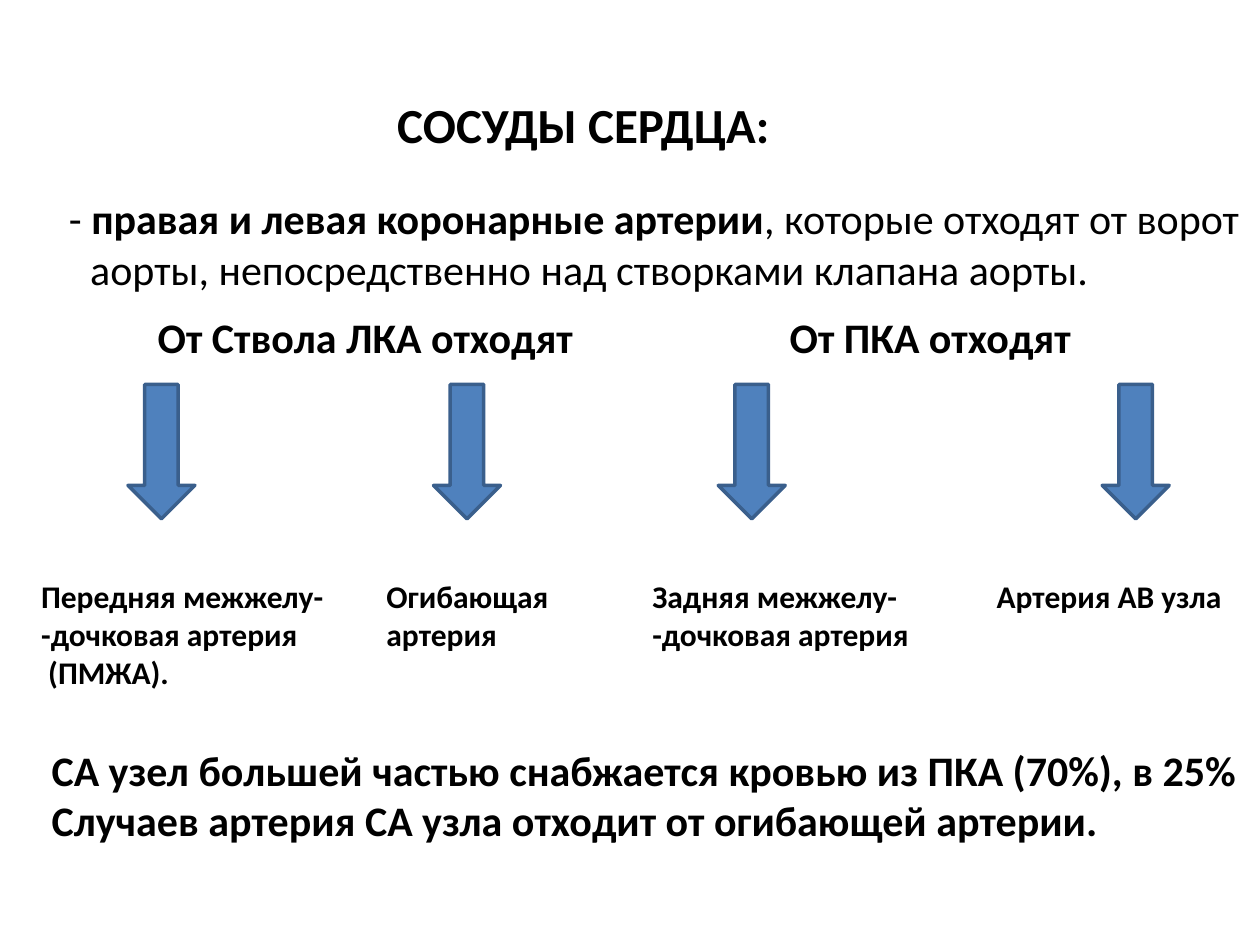
from typing import NamedTuple

from pptx import Presentation
from pptx.dml.color import RGBColor
from pptx.enum.shapes import MSO_SHAPE as Preset
from pptx.enum.text import MSO_ANCHOR as Anchor, PP_ALIGN as Align
from pptx.util import Cm, Pt

BLACK = RGBColor(0x00, 0x00, 0x00)
BLUE = RGBColor(0x4F, 0x81, 0xBD)
DARK_BLUE = RGBColor(0x3A, 0x5F, 0x8C)
FONT = "Calibri"

ARROW_TOP, ARROW_WIDTH, ARROW_HEIGHT = 7.75, 1.35, 2.71
BRANCH_TOP = 11.51
HEADING_TOP = 6.15


class Run(NamedTuple):
    text: str
    bold: bool = True


class Label(NamedTuple):
    """A block of lines; lengths in centimetres, size in points."""
    left: float
    top: float
    width: float
    height: float
    size: int
    lines: list[list[Run]]
    hanging: float = 0


class Branch(NamedTuple):
    """An arrow and the artery it leads to."""
    arrow_left: float
    label_left: float
    label_width: float
    lines: list[str]


def bold_lines(*texts: str) -> list[list[Run]]:
    return [[Run(text)] for text in texts]


def write(shape, label: Label) -> None:
    shape.left, shape.top = Cm(label.left), Cm(label.top)
    shape.width, shape.height = Cm(label.width), Cm(label.height)
    frame = shape.text_frame
    frame.word_wrap = False
    frame.vertical_anchor = Anchor.TOP
    font_format = {"name": FONT, "size": Pt(label.size)}
    for number, line in enumerate(label.lines):
        paragraph = frame.add_paragraph() if number else frame.paragraphs[0]
        paragraph.alignment = Align.LEFT
        if label.hanging:
            properties = paragraph._p.get_or_add_pPr()
            properties.set("marL", str(Cm(label.hanging)))
            properties.set("indent", str(-Cm(label.hanging) if number == 0 else 0))
        for part in line:
            run = paragraph.add_run()
            run.text = part.text
            for name, value in font_format.items():
                setattr(run.font, name, value)
            run.font.bold = part.bold
            run.font.color.rgb = BLACK


def add_label(slide, label: Label) -> None:
    write(slide.shapes.add_textbox(0, 0, 0, 0), label)


def add_branch(slide, branch: Branch) -> None:
    arrow = slide.shapes.add_shape(
        Preset.DOWN_ARROW, Cm(branch.arrow_left), Cm(ARROW_TOP),
        Cm(ARROW_WIDTH), Cm(ARROW_HEIGHT))
    arrow.shadow.inherit = False
    arrow.fill.solid()
    arrow.fill.fore_color.rgb = BLUE
    arrow.line.color.rgb = DARK_BLUE
    arrow.line.width = Pt(2)
    height = 0.25 + 0.77 * len(branch.lines)
    add_label(slide, Label(branch.label_left, BRANCH_TOP, branch.label_width,
                           height, 18, bold_lines(*branch.lines)))


TITLE = Label(7.75, 1.78, 8.1, 2.64, 28, bold_lines("СОСУДЫ СЕРДЦА:"))

LABELS = [
    # Origin of the coronary arteries
    Label(1.14, 3.76, 24.31, 2.31, 24, [
        [Run("- ", False), Run("правая и левая коронарные артерии"),
         Run(", которые отходят от ворот", False)],
        [Run("аорты, непосредственно над створками клапана аорты.", False)],
    ], hanging=0.43),
    # Headings of the two branch groups
    Label(2.93, HEADING_TOP, 8.9, 1.27, 24, bold_lines("От Ствола ЛКА отходят")),
    Label(15.67, HEADING_TOP, 6.93, 1.27, 24, bold_lines("От ПКА отходят")),
    # Supply of the SA node
    Label(0.79, 14.88, 24.61, 2.31, 24, bold_lines(
        "СА узел большей частью снабжается кровью из ПКА (70%), в 25%",
        "Случаев артерия СА узла отходит от огибающей артерии.")),
]

BRANCHES = [
    Branch(2.58, 0.58, 6.25, ["Передняя межжелу-", "-дочковая артерия", " (ПМЖА)."]),
    Branch(8.74, 7.54, 3.81, ["Огибающая", "артерия"]),
    Branch(14.48, 12.9, 5.72, ["Задняя межжелу-", "-дочковая артерия"]),
    Branch(22.22, 19.84, 5.11, ["Артерия АВ узла"]),
]


def main() -> None:
    deck = Presentation()
    deck.slide_width, deck.slide_height = Cm(25.4), Cm(19.05)
    slide = deck.slides.add_slide(deck.slide_layouts.get_by_name("Title Only"))
    write(slide.shapes.title, TITLE)
    for label in LABELS:
        add_label(slide, label)
    for branch in BRANCHES:
        add_branch(slide, branch)
    deck.save("out.pptx")


if __name__ == "__main__":
    main()
